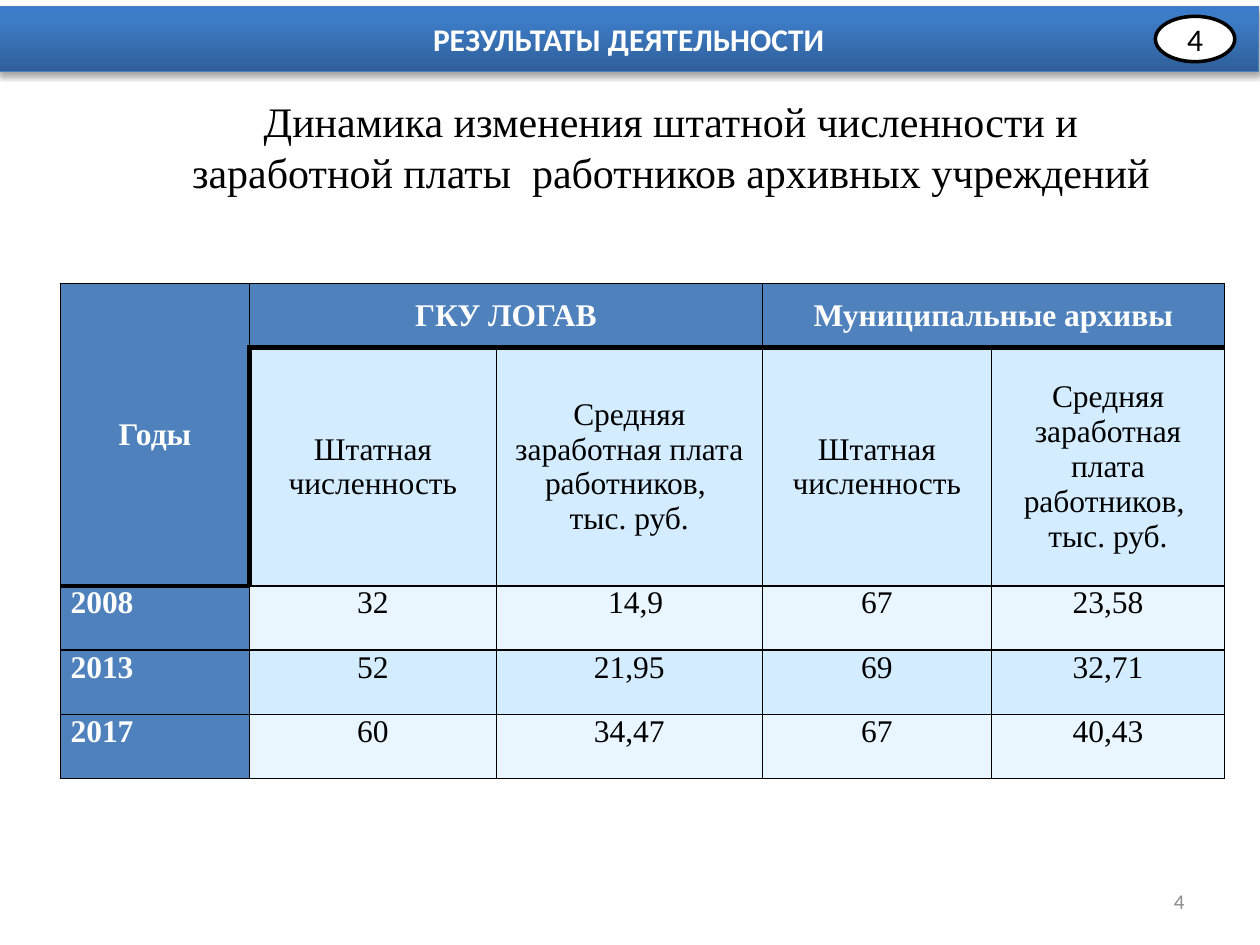
import copy

import pptx
import pptx.util
import pptx.dml.color
import pptx.enum.shapes
import pptx.enum.text
import pptx.oxml
import pptx.oxml.ns
import pptx.oxml.xmlchemy

ALIGN = pptx.enum.text.PP_ALIGN
ANCHOR = pptx.enum.text.MSO_ANCHOR
SHAPE = pptx.enum.shapes.MSO_SHAPE
QN = pptx.oxml.ns.qn
NS = pptx.oxml.ns.nsdecls("a")

WIDE, HIGH = pptx.util.Inches(10), pptx.util.Inches(7.5)
SERIF, SANS = "Times New Roman", "Calibri"
WHITE, BLACK, BLUE = "FFFFFF", "000000", "4F81BD"
BANDS = ("EAF6FF", "D3ECFF")

# Shares of the slide, in percent
COLS = (15, 19.6, 21.1, 18.2, 18.5)
ROWS = (6.8, 25.2, 6.8, 6.8, 6.8)

STAFF = "Штатная численность"
PAY = "Средняя заработная плата работников, \nтыс. руб."
DATA = (
    ("Годы", "ГКУ ЛОГАВ", "", "Муниципальные архивы", ""),
    ("", STAFF, PAY, STAFF, PAY),
    ("2008", "32", "14,9", "67", "23,58"),
    ("2013", "52", "21,95", "69", "32,71"),
    ("2017", "60", "34,47", "67", "40,43"),
)


def tint(code):
    return pptx.dml.color.RGBColor.from_string(code)


def across(share):
    return round(WIDE * share / 100)


def down(share):
    return round(HIGH * share / 100)


def place(left, top, width, height):
    return across(left), down(top), across(width), down(height)


def write(frame, text, align, size, font, color, bold=False):
    """Fill a frame with one paragraph for each line of text."""
    form = {"size": pptx.util.Pt(size), "name": font, "bold": bold}
    for i, line in enumerate(text.split("\n")):
        para = frame.add_paragraph() if i else frame.paragraphs[0]
        para.alignment = align
        run = para.add_run()
        run.text = line
        for key, value in form.items():
            setattr(run.font, key, value)
        run.font.color.rgb = tint(color)


def label(slide, spot, text, anchor, *style):
    frame = slide.shapes.add_textbox(*spot).text_frame
    form = {"word_wrap": True, "vertical_anchor": anchor,
            "margin_top": 0, "margin_bottom": 0}
    for key, value in form.items():
        setattr(frame, key, value)
    write(frame, text, *style)


def block(slide, kind, spot, line, weight, text, *style):
    shape = slide.shapes.add_shape(kind, *spot)
    shape.shadow.inherit = False
    shape.line.color.rgb = tint(line)
    shape.line.width = pptx.util.Pt(weight)
    shape.text_frame.vertical_anchor = ANCHOR.MIDDLE
    write(shape.text_frame, text, ALIGN.CENTER, *style)
    return shape


def blend(shape, stops):
    """Give a shape an upward gradient of (share, colour) stops."""
    fill = shape.fill
    fill.gradient()
    fill.gradient_angle = 90
    group = shape.element.spPr.find(QN("a:gradFill")).find(QN("a:gsLst"))
    while len(group) < len(stops):
        group.append(copy.deepcopy(group[0]))
    for stop, (share, color) in zip(fill.gradient_stops, stops):
        stop.position = share
        stop.color.rgb = tint(color)


def shade(shape):
    """Cast a soft shadow straight down."""
    shape.element.spPr.find(QN("a:effectLst")).append(pptx.oxml.parse_xml(
        f'<a:outerShdw {NS} blurRad="40000" dist="23000" dir="5400000" '
        'rotWithShape="0"><a:srgbClr val="000000"><a:alpha val="35000"/>'
        '</a:srgbClr></a:outerShdw>'))


def edge(cell, row, col):
    """Rule a cell; heavy lines run under the head and the year column."""
    heavy = {
        "L": (row, col) == (1, 1),
        "R": (row, col) == (1, 0),
        "T": (row == 1 and col > 0) or (row, col) == (2, 0),
        "B": row == 0 or (row, col) == (1, 0),
    }
    props = cell._tc.get_or_add_tcPr()
    for side, thick in heavy.items():
        width = pptx.util.Pt(3 if thick else 1)
        props.append(pptx.oxml.parse_xml(
            f'<a:ln{side} {NS} w="{width}"><a:solidFill>'
            f'<a:srgbClr val="{BLACK}"/></a:solidFill></a:ln{side}>'))


def dress(cell, row, col):
    """Set borders, fill, margins and text of one table cell."""
    edge(cell, row, col)
    head = row == 0 or col == 0
    cell.fill.solid()
    cell.fill.fore_color.rgb = tint(BLUE if head else BANDS[row % 2])
    side = pptx.util.Inches(0.08)
    form = {"margin_left": side, "margin_right": side,
            "margin_top": 0, "margin_bottom": 0,
            "vertical_anchor": ANCHOR.MIDDLE if row < 2 else ANCHOR.TOP}
    for key, value in form.items():
        setattr(cell, key, value)
    text = DATA[row][col]
    if text:
        align = ALIGN.JUSTIFY if row > 1 and col == 0 else ALIGN.CENTER
        write(cell.text_frame, text, align, 18, SERIF,
              WHITE if head else BLACK, head)


def chart(slide):
    """Add the table of staff and pay by year."""
    spot = place(4.8, 30, sum(COLS), sum(ROWS))
    table = slide.shapes.add_table(len(ROWS), len(COLS), *spot).table
    table.first_row = table.horz_banding = False
    for col, share in zip(table.columns, COLS):
        col.width = across(share)
    for row, share in zip(table.rows, ROWS):
        row.height = down(share)
    for first, last in (((0, 0), (1, 0)), ((0, 1), (0, 2)), ((0, 3), (0, 4))):
        table.cell(*first).merge(table.cell(*last))
    for row in range(len(ROWS)):
        for col in range(len(COLS)):
            dress(table.cell(row, col), row, col)
    para = table.cell(2, 2).text_frame.paragraphs[0]
    para._p.get_or_add_pPr().set("indent", str(pptx.util.Inches(0.1)))


def main():
    deck = pptx.Presentation()
    deck.slide_width, deck.slide_height = WIDE, HIGH
    slide = deck.slides.add_slide(deck.slide_layouts[6])

    band = block(slide, SHAPE.RECTANGLE, place(-0.1, 0.67, 100, 6.93),
                 "4B7EBC", 0.75, "РЕЗУЛЬТАТЫ ДЕЯТЕЛЬНОСТИ",
                 18, SANS, WHITE, True)
    blend(band, ((0, "2F5F99"), (0.8, "3D7CC7"), (1, "3A7CCB")))
    shade(band)
    badge = block(slide, SHAPE.OVAL, place(91.7, 1.73, 6.3, 4.8),
                  BLACK, 2, "4", 18, SANS, BLACK)
    badge.fill.solid()
    badge.fill.fore_color.rgb = tint(WHITE)

    label(slide, place(12, 10.13, 82.5, 15.73),
          "Динамика изменения штатной численности и "
          "заработной платы  работников архивных учреждений",
          ANCHOR.TOP, ALIGN.CENTER, 24, SERIF, BLACK)
    chart(slide)
    label(slide, place(71.7, 92.67, 23.3, 5.33), "4",
          ANCHOR.MIDDLE, ALIGN.RIGHT, 12, SANS, "8C8C8C")
    deck.save("out.pptx")


if __name__ == "__main__":
    main()
